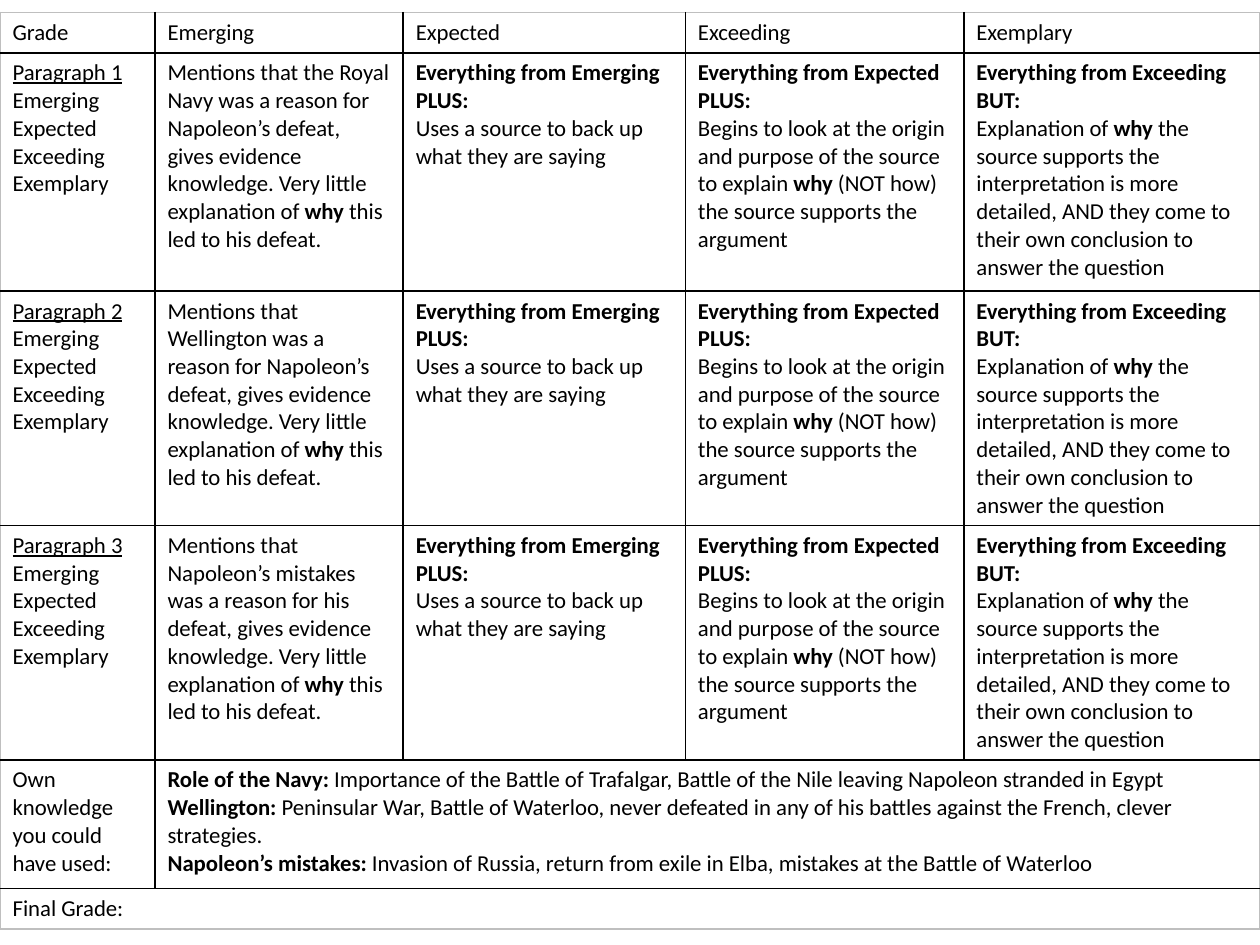
from lxml.etree import SubElement
from pptx import Presentation
from pptx.dml.color import RGBColor
from pptx.oxml.ns import qn
from pptx.util import Inches, Pt

COLORS = {"text": "000000", "inner": "000000", "outer": "BFBFBF", "fill": "FFFFFF"}
COLUMN_WIDTHS = [1.23, 1.97, 2.24, 2.21, 2.35]
ROW_HEIGHTS = [0.32, 1.89, 1.86, 1.86, 1.02, 0.32]
GRADES = ["Emerging", "Expected", "Exceeding", "Exemplary"]
REASONS = [
    "the Royal Navy was a reason for Napoleon’s defeat",
    "Wellington was a reason for Napoleon’s defeat",
    "Napoleon’s mistakes was a reason for his defeat",
]
HIGHER_GRADES = [
    ["*Everything from Emerging PLUS:*", "Uses a source to back up what they are saying"],
    ["*Everything from Expected PLUS:*",
     "Begins to look at the origin and purpose of the source to explain *why* (NOT how) "
     "the source supports the argument"],
    ["*Everything from Exceeding BUT:*",
     "Explanation of *why* the source supports the interpretation is more detailed, "
     "AND they come to their own conclusion to answer the question"],
]
OWN_KNOWLEDGE = [
    "*Role of the Navy:* Importance of the Battle of Trafalgar, Battle of the Nile "
    "leaving Napoleon stranded in Egypt",
    "*Wellington:* Peninsular War, Battle of Waterloo, never defeated in any of his "
    "battles against the French, clever strategies.",
    "*Napoleon’s mistakes:* Invasion of Russia, return from exile in Elba, "
    "mistakes at the Battle of Waterloo",
]


def write_text(paragraph, text, size=13, font="Calibri", color="text", underline=False):
    """Write text into a paragraph; parts between asterisks are bold."""
    for index, part in enumerate(text.split("*")):
        if part:
            run = paragraph.add_run()
            run.text = part
            run.font.name = font
            run.font.size = Pt(size)
            run.font.bold = index % 2 == 1
            run.font.underline = underline
            run.font.color.rgb = RGBColor.from_string(COLORS[color])


def fill_cell(cell, lines, underline_first=False):
    for index, line in enumerate(lines):
        frame = cell.text_frame
        paragraph = frame.add_paragraph() if index else frame.paragraphs[0]
        write_text(paragraph, line, underline=underline_first and index == 0)


def style_cell(cell, outer_edges):
    """Fill the cell and draw its borders; outer_edges is left, right, top, bottom."""
    properties = cell._tc.get_or_add_tcPr()
    for tag, is_outer in zip(("a:lnL", "a:lnR", "a:lnT", "a:lnB"), outer_edges):
        line = SubElement(properties, qn(tag), w=str(Pt(1)))
        fill = SubElement(line, qn("a:solidFill"))
        SubElement(fill, qn("a:srgbClr"), val=COLORS["outer" if is_outer else "inner"])
    cell.fill.solid()
    cell.fill.fore_color.rgb = RGBColor.from_string(COLORS["fill"])


def add_grid(slide):
    rows, columns = len(ROW_HEIGHTS), len(COLUMN_WIDTHS)
    table = slide.shapes.add_table(
        rows, columns, Inches(0), Inches(0.1),
        Inches(sum(COLUMN_WIDTHS)), Inches(sum(ROW_HEIGHTS))).table
    table.first_row = table.horz_banding = False
    for column, width in zip(table.columns, COLUMN_WIDTHS):
        column.width = Inches(width)
    for row, height in zip(table.rows, ROW_HEIGHTS):
        row.height = Inches(height)
    for row, first_column in ((4, 1), (5, 0)):
        table.cell(row, first_column).merge(table.cell(row, columns - 1))
    for row in range(rows):
        for column in range(columns):
            cell = table.cell(row, column)
            if not cell.is_spanned:
                last_column = column + cell.span_width == columns
                style_cell(cell, (column == 0, last_column, row == 0, row == rows - 1))
    return table


def add_rubric(table):
    for column, heading in enumerate(["Grade", *GRADES]):
        fill_cell(table.cell(0, column), [heading])
    for row, reason in enumerate(REASONS, start=1):
        fill_cell(table.cell(row, 0), [f"Paragraph {row}", *GRADES], underline_first=True)
        emerging = (f"Mentions that {reason}, gives evidence knowledge. "
                    "Very little explanation of *why* this led to his defeat.")
        for column, lines in enumerate([[emerging], *HIGHER_GRADES], start=1):
            fill_cell(table.cell(row, column), lines)
    fill_cell(table.cell(4, 0), ["Own knowledge you could have used:"])
    fill_cell(table.cell(4, 1), OWN_KNOWLEDGE)
    fill_cell(table.cell(5, 0), ["Final Grade:"])


def main():
    presentation = Presentation()
    presentation.slide_width = Inches(10)
    presentation.slide_height = Inches(7.5)
    slide = presentation.slides.add_slide(presentation.slide_layouts[6])
    add_rubric(add_grid(slide))
    presentation.save("out.pptx")


if __name__ == "__main__":
    main()
